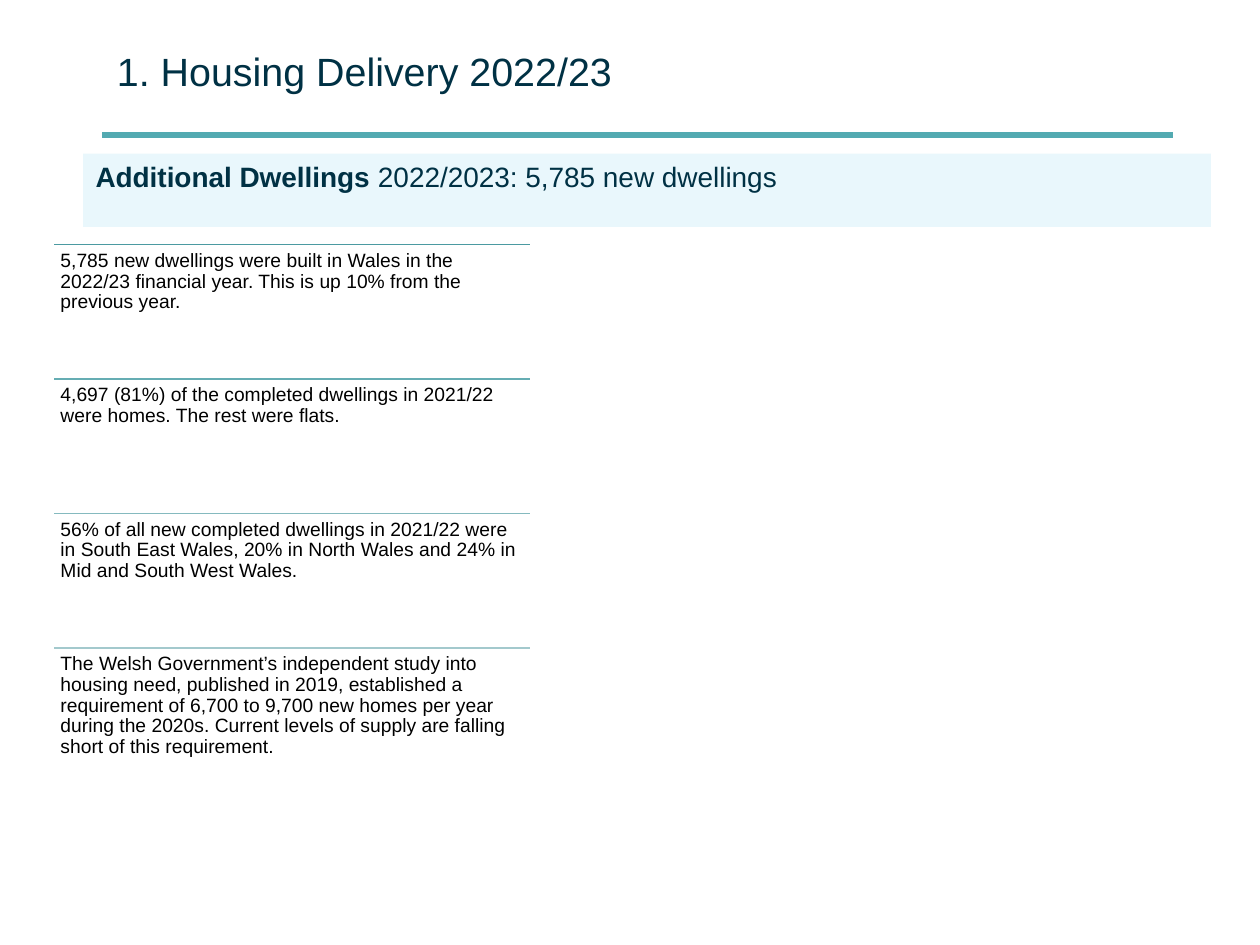
"""Build the housing delivery slide."""
from lxml.etree import SubElement
from pptx import Presentation
from pptx.dml.color import RGBColor
from pptx.enum.shapes import MSO_CONNECTOR, MSO_SHAPE
from pptx.enum.text import MSO_ANCHOR, PP_ALIGN
from pptx.oxml.ns import qn
from pptx.util import Inches, Pt

FONT = "Arial"
NAVY, BLACK, TEAL, PALE_BLUE = "003144", "000000", "53AAB1", "E9F7FC"
TITLE = "1. Housing Delivery 2022/23"
HEADLINE = [("Additional Dwellings ", True), ("2022/2023: 5,785 new dwellings", False)]
FINDINGS = [
    ("4B9AA1", "5,785 new dwellings were built in Wales in the 2022/23 financial year. "
               "This is up 10% from the previous year."),
    ("65ADB3", "4,697 (81%) of the completed dwellings in 2021/22 were homes. "
               "The rest were flats."),
    ("85BABF", "56% of all new completed dwellings in 2021/22 were in South East Wales, "
               "20% in North Wales and 24% in Mid and South West Wales."),
    ("A3C9CD", "The Welsh Government’s independent study into housing need, published in 2019, "
               "established a requirement of 6,700 to 9,700 new homes per year during the 2020s. "
               "Current levels of supply are falling short of this requirement."),
]
LEFT, TOP, WIDTH, ROW_HEIGHT = 0.43, 1.94, 3.78, 1.067


def rgb(color):
    return RGBColor.from_string(color)


def add_rule(slide, left, top, width, color, weight):
    rule = slide.shapes.add_connector(
        MSO_CONNECTOR.STRAIGHT, Inches(left), Inches(top), Inches(left + width), Inches(top))
    rule.line.color.rgb = rgb(color)
    rule.line.width = Pt(weight)
    SubElement(rule._element.spPr, qn("a:effectLst"))


def add_text(slide, runs, box, size, color=NAVY, fill=None, anchor=MSO_ANCHOR.TOP,
             side=0.1, spacing=None):
    position = [Inches(length) for length in box]
    if fill:
        holder = slide.shapes.add_shape(MSO_SHAPE.RECTANGLE, *position)
        holder.shadow.inherit = False
        holder.fill.solid()
        holder.fill.fore_color.rgb = rgb(fill)
        holder.line.fill.background()
    else:
        holder = slide.shapes.add_textbox(*position)
    frame = holder.text_frame
    frame.word_wrap = True
    frame.vertical_anchor = anchor
    frame.margin_left = frame.margin_right = Inches(side)
    frame.margin_top = frame.margin_bottom = Inches(0.05)
    paragraph = frame.paragraphs[0]
    paragraph.alignment = PP_ALIGN.LEFT
    paragraph.line_spacing = spacing
    for words, bold in runs:
        run = paragraph.add_run()
        run.text = words
        run.font.name = FONT
        run.font.size = Pt(size)
        run.font.bold = bold
        run.font.color.rgb = rgb(color)


def main():
    deck = Presentation()
    deck.slide_width, deck.slide_height = Inches(10), Inches(7.5)
    slide = deck.slides.add_slide(deck.slide_layouts[6])
    add_rule(slide, 0.81, 1.07, 8.5, TEAL, 3.5)
    add_text(slide, HEADLINE, (0.66, 1.22, 8.95, 0.58), 16, fill=PALE_BLUE)
    for row, (color, finding) in enumerate(FINDINGS):
        top = TOP + row * ROW_HEIGHT
        add_rule(slide, LEFT, top, WIDTH, color, 0.85)
        add_text(slide, [(finding, False)], (LEFT, top, WIDTH, ROW_HEIGHT), 11,
                 color=BLACK, side=0.05, spacing=0.9)
    add_text(slide, [(TITLE, False)], (0.83, 0.07, 8.5, 0.98), 22.5, anchor=MSO_ANCHOR.MIDDLE)
    deck.save("out.pptx")


if __name__ == "__main__":
    main()
